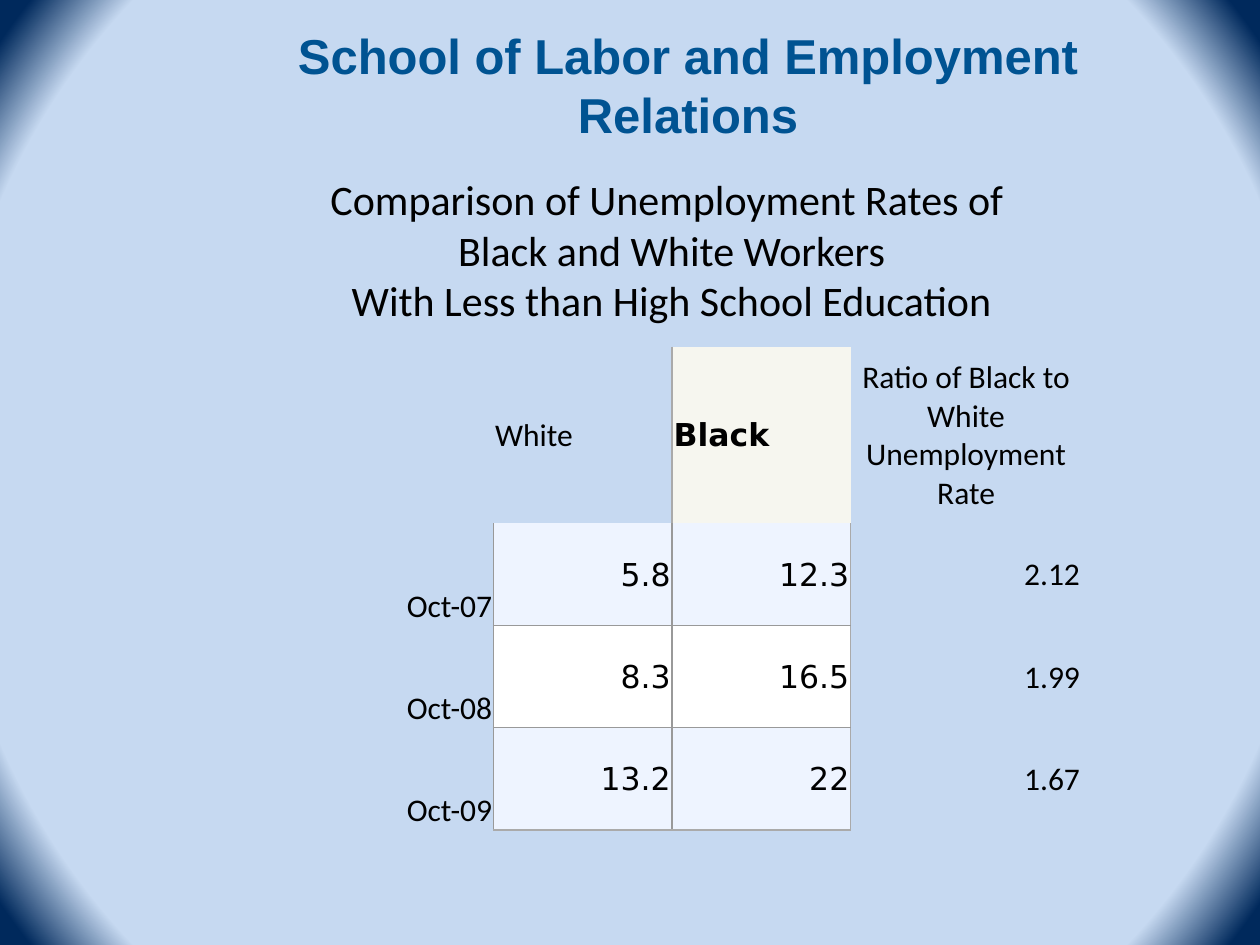
import pptx
import pptx.dml.color
import pptx.enum.text
import pptx.oxml
import pptx.oxml.ns
import pptx.util

Cm = pptx.util.Cm
RGB = pptx.dml.color.RGBColor
ALIGN = pptx.enum.text.PP_ALIGN
ANCHOR = pptx.enum.text.MSO_ANCHOR
GROW = pptx.enum.text.MSO_AUTO_SIZE.SHAPE_TO_FIT_TEXT

PALE_BLUE = RGB(0xC6, 0xD9, 0xF1)
NAVY = RGB(0x00, 0x29, 0x5C)
TITLE_BLUE = RGB(0x00, 0x53, 0x92)
BLACK = RGB(0x00, 0x00, 0x00)
WHITE = RGB(0xFF, 0xFF, 0xFF)
CREAM = RGB(0xF6, 0xF6, 0xEF)
BAND = RGB(0xEE, 0xF4, 0xFF)
INNER_GREY = RGB(0x99, 0x99, 0x99)
OUTER_GREY = RGB(0xAA, 0xAA, 0xAA)

HEADERS = ["", "White", "Black", "Ratio of Black to White Unemployment Rate"]
RATES = [
    ["Oct-07", "5.8", "12.3", "2.12"],
    ["Oct-08", "8.3", "16.5", "1.99"],
    ["Oct-09", "13.2", "22", "1.67"],
]
COLUMN_WIDTHS = [3.6, 3.6, 3.6, 4.65]
ROW_HEIGHTS = [3.56, 2.06, 2.06, 2.06]


def write(frame, text, size=18, font="Calibri", color=BLACK, bold=False, align=ALIGN.CENTER):
    frame.text = text
    for paragraph in frame.paragraphs:
        paragraph.alignment = align
        for run in paragraph.runs:
            run.font.size = pptx.util.Pt(size)
            run.font.name = font
            run.font.bold = bold
            run.font.color.rgb = color


def paint_background(slide):
    fill = slide.background.fill
    fill.gradient()
    for stop, position, color in zip(fill.gradient_stops, (0.87, 0.97), (PALE_BLUE, NAVY)):
        stop.position = position
        stop.color.rgb = color
    linear = next(slide.element.iter(pptx.oxml.ns.qn("a:lin")))
    circle = pptx.oxml.parse_xml(
        f'<a:path {pptx.oxml.ns.nsdecls("a")} path="circle">'
        '<a:fillToRect l="50000" t="50000" r="50000" b="50000"/></a:path>')
    linear.getparent().replace(linear, circle)


def place_title(slide, left, top, width, height):
    title = slide.shapes.title
    title.left, title.top, title.width, title.height = left, top, width, height
    frame = title.text_frame
    frame.word_wrap = True
    frame.auto_size = GROW
    frame.vertical_anchor = ANCHOR.TOP
    write(frame, "School of Labor and Employment Relations",
          size=28, font="Arial", color=TITLE_BLUE, bold=True)


def place_heading(slide, left, top, width, height):
    frame = slide.shapes.add_textbox(left, top, width, height).text_frame
    frame.word_wrap = False
    frame.auto_size = GROW
    write(frame, "Comparison of Unemployment Rates of \vBlack and White Workers\n"
                 "With Less than High School Education", size=24)


def vertical_rule(row, column):
    """Colour of the rule at the left of a cell, or None."""
    if column == 2:
        return INNER_GREY if row else OUTER_GREY
    if row and column in (1, 3):
        return INNER_GREY if column == 1 else OUTER_GREY
    return None


def horizontal_rule(row, column):
    """Colour of the rule at the top of a cell, or None."""
    if column in (1, 2) and row >= 2:
        return INNER_GREY if row <= len(RATES) else OUTER_GREY
    return None


def set_borders(cell, row, column):
    rules = {
        "lnL": vertical_rule(row, column),
        "lnR": vertical_rule(row, column + 1),
        "lnT": horizontal_rule(row, column),
        "lnB": horizontal_rule(row + 1, column),
    }
    properties = cell._tc.get_or_add_tcPr()
    for side, color in rules.items():
        paint = f'<a:solidFill><a:srgbClr val="{color}"/></a:solidFill>' if color else "<a:noFill/>"
        properties.append(pptx.oxml.parse_xml(
            f'<a:{side} {pptx.oxml.ns.nsdecls("a")} w="12700">{paint}</a:{side}>'))


def set_fill(cell, row, column):
    if column in (1, 2) and row:
        color = BAND if row % 2 else WHITE
    else:
        color = CREAM if (row, column) == (0, 2) else None
    if color:
        cell.fill.solid()
        cell.fill.fore_color.rgb = color
    else:
        cell.fill.background()


def place_rates(slide, left, top, width, height):
    rows = [HEADERS] + RATES
    table = slide.shapes.add_table(len(rows), len(HEADERS), left, top, width, height).table
    table.first_row = table.horz_banding = False
    for column, size in zip(table.columns, COLUMN_WIDTHS):
        column.width = Cm(size)
    for row, size in zip(table.rows, ROW_HEIGHTS):
        row.height = Cm(size)

    for r, texts in enumerate(rows):
        for c, text in enumerate(texts):
            cell = table.cell(r, c)
            set_borders(cell, r, c)
            set_fill(cell, r, c)
            cell.margin_left = cell.margin_right = cell.margin_top = Cm(0.03)
            cell.margin_bottom = 0
            cell.vertical_anchor = ANCHOR.BOTTOM if r and c == 0 else ANCHOR.MIDDLE
            header_align = ALIGN.CENTER if c == 3 else ALIGN.LEFT
            is_rate = c == 2 or (r and c == 1)
            write(cell.text_frame, text, font="DejaVu Sans" if is_rate else "Calibri",
                  bold=text == "Black", align=ALIGN.RIGHT if r else header_align)


def main():
    deck = pptx.Presentation()
    deck.slide_width, deck.slide_height = Cm(25.4), Cm(19.05)
    slide = deck.slides.add_slide(deck.slide_layouts[5])
    paint_background(slide)
    place_title(slide, Cm(3.81), Cm(0.39), Cm(20.12), Cm(2.64))
    place_rates(slide, Cm(6.35), Cm(6.99), Cm(sum(COLUMN_WIDTHS)), Cm(sum(ROW_HEIGHTS)))
    place_heading(slide, Cm(6.35), Cm(3.38), Cm(14.38), Cm(3.33))
    deck.save("out.pptx")


if __name__ == "__main__":
    main()
